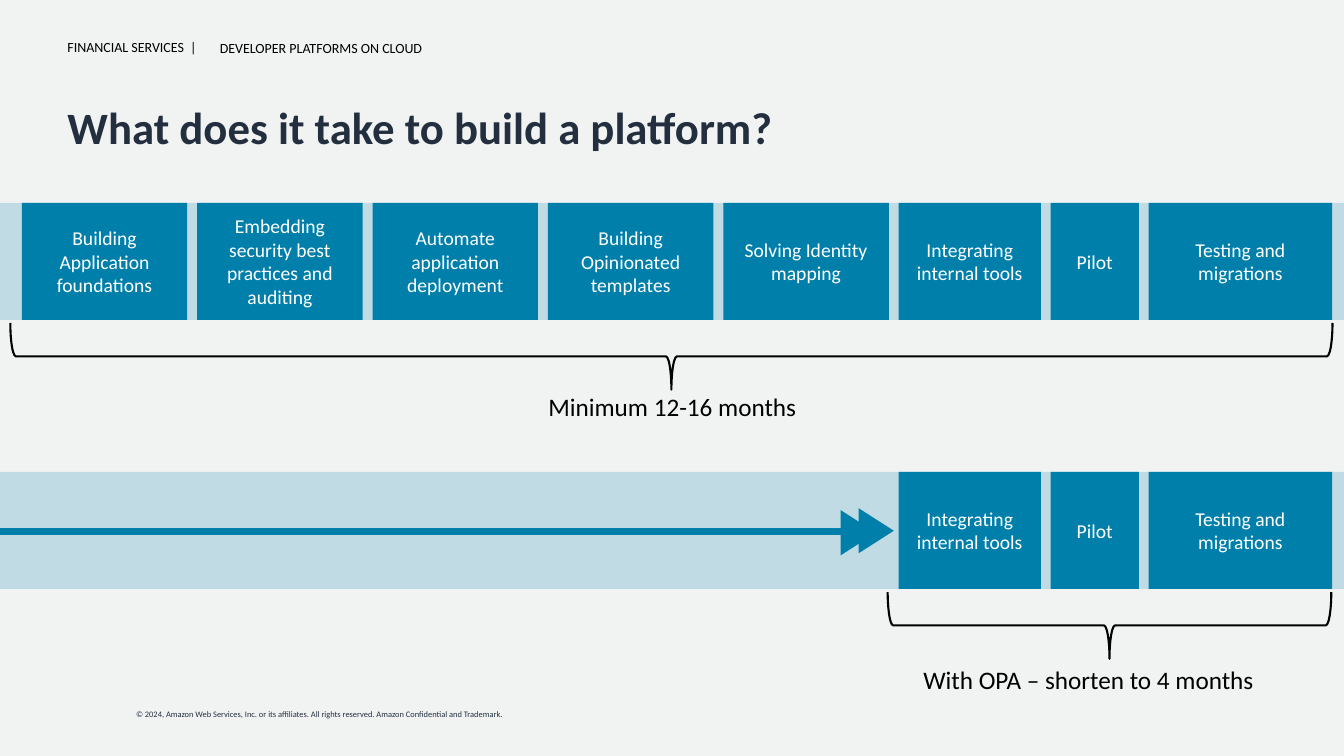
import pptx
import pptx.util
import pptx.dml.color
import pptx.enum.shapes
import pptx.enum.text
import pptx.oxml
import pptx.oxml.ns
from dataclasses import dataclass

Cm = pptx.util.Cm
Pt = pptx.util.Pt
Kind = pptx.enum.shapes.MSO_SHAPE
Align = pptx.enum.text.PP_ALIGN
Anchor = pptx.enum.text.MSO_ANCHOR


@dataclass(frozen=True)
class Theme:
    font: str = "Calibri"
    back: str = "F1F3F3"
    blue: str = "007FAA"
    navy: str = "232F3E"
    black: str = "000000"
    white: str = "FFFFFF"
    title: float = 32
    label: float = 18
    stage: float = 14
    head: float = 10
    foot: float = 6


THEME = Theme()

TITLE = "What does it take to build a platform?"
TITLE_BOX = (1.7, 2.54, 30.48, 1.5)

# text, box in cm, type size, colour, line spacing
NOTES = [
    ("DEVELOPER PLATFORMS ON CLOUD", (5.54, 0.91, 28, 0.66),
     THEME.head, THEME.black, 0.9),
    ("FINANCIAL SERVICES  |", (1.7, 0.89, 3.68, 0.66),
     THEME.head, THEME.black, 0.9),
    ("© 2024, Amazon Web Services, Inc. or its affiliates. All rights "
     "reserved. Amazon Confidential and Trademark.",
     (3.43, 17.75, 10.7, 0.51), THEME.foot, THEME.navy, 1.0),
    ("Minimum 12-16 months", (13.82, 9.73, 7.44, 1.02),
     THEME.label, THEME.black, 1.0),
    ("With OPA – shorten to 4 months", (23.27, 16.61, 10.5, 1.02),
     THEME.label, THEME.black, 1.0),
]

# text, width in cm
STAGES = [
    ("Building Application foundations", 4.17),
    ("Embedding security best practices and auditing", 4.17),
    ("Automate application deployment", 4.17),
    ("Building Opinionated templates", 4.17),
    ("Solving Identity mapping", 4.17),
    ("Integrating internal tools", 3.58),
    ("Pilot", 2.22),
    ("Testing and migrations", 4.62),
]
# top of band, first stage shown, left and length of brace
ROWS = [(5.11, 0, 0.26, 33.32), (11.89, 5, 22.37, 11.18)]

WIDE, HIGH = 33.87, 19.05
BAND, START, GAP = 2.95, 0.55, 0.25
BRACE, DROP = 1.68, 3.03
ARROW_Y, ARROW_END = 13.4, 22.33
TIP = (1.14, 0.89)
TIPS = [(21.51, 12.93), (21.06, 12.98)]


def rgb(code):
    return pptx.dml.color.RGBColor.from_string(code)


def write(frame, text, size, color, bold=False, side=0.0, space=1.0,
          align=Align.LEFT, anchor=Anchor.TOP):
    frame.word_wrap = True
    frame.auto_size = pptx.enum.text.MSO_AUTO_SIZE.NONE
    frame.vertical_anchor = anchor
    frame.margin_left = frame.margin_right = Cm(side)
    frame.margin_top = frame.margin_bottom = Cm(0.13)
    para = frame.paragraphs[0]
    para.alignment = align
    para.line_spacing = space
    run = para.add_run()
    run.text = text
    run.font.name = THEME.font
    run.font.size = Pt(size)
    run.font.bold = bold
    run.font.color.rgb = rgb(color)


def block(slide, kind, box):
    """Add a flat blue shape without outline."""
    shape = slide.shapes.add_shape(kind, *map(Cm, box))
    shape.shadow.inherit = False
    shape.fill.solid()
    shape.fill.fore_color.rgb = rgb(THEME.blue)
    shape.line.fill.background()
    return shape


def add_band(slide, top):
    band = block(slide, Kind.RECTANGLE, (0, top, WIDE, BAND))
    color = band.fill._xPr.find(".//" + pptx.oxml.ns.qn("a:srgbClr"))
    alpha = pptx.oxml.parse_xml(
        f'<a:alpha {pptx.oxml.ns.nsdecls("a")} val="20000"/>')
    color.append(alpha)


def add_brace(slide, left, top, length):
    """Turn a right brace so that it points down below a row."""
    x = left + (length - BRACE) / 2
    y = top + (BRACE - length) / 2
    brace = block(slide, Kind.RIGHT_BRACE, (x, y, BRACE, length))
    brace.rotation = 90
    brace.fill.background()
    brace.line.color.rgb = rgb(THEME.black)
    brace.line.width = Pt(1.5)


def add_row(slide, top, first, left, length):
    add_band(slide, top)
    x = START
    for index, (text, width) in enumerate(STAGES):
        if index >= first:
            stage = block(slide, Kind.RECTANGLE, (x, top, width, BAND))
            write(stage.text_frame, text, THEME.stage, THEME.white, side=0.13,
                  align=Align.CENTER, anchor=Anchor.MIDDLE)
        x += width + GAP
    add_brace(slide, left, top + DROP, length)


def add_arrow(slide):
    line = slide.shapes.add_connector(
        pptx.enum.shapes.MSO_CONNECTOR.STRAIGHT,
        Cm(0), Cm(ARROW_Y), Cm(ARROW_END), Cm(ARROW_Y))
    line.line.color.rgb = rgb(THEME.blue)
    line.line.width = Pt(4.75)
    names = pptx.oxml.ns.nsdecls("a")
    line.line._get_or_add_ln().append(
        pptx.oxml.parse_xml(f'<a:tailEnd {names} type="triangle"/>'))
    line._element.spPr.append(pptx.oxml.parse_xml(f"<a:effectLst {names}/>"))
    for spot in TIPS:
        block(slide, Kind.FLOWCHART_EXTRACT, spot + TIP).rotation = 90


def main():
    deck = pptx.Presentation()
    deck.slide_width, deck.slide_height = Cm(WIDE), Cm(HIGH)
    slide = deck.slides.add_slide(deck.slide_layouts[5])
    slide.background.fill.solid()
    slide.background.fill.fore_color.rgb = rgb(THEME.back)

    title = slide.shapes.title
    title.left, title.top, title.width, title.height = map(Cm, TITLE_BOX)
    write(title.text_frame, TITLE, THEME.title, THEME.navy, bold=True,
          space=0.9)
    for text, box, size, color, space in NOTES:
        note = slide.shapes.add_textbox(*map(Cm, box))
        write(note.text_frame, text, size, color, space=space)
    for row in ROWS:
        add_row(slide, *row)
    add_arrow(slide)
    deck.save("out.pptx")


if __name__ == "__main__":
    main()
